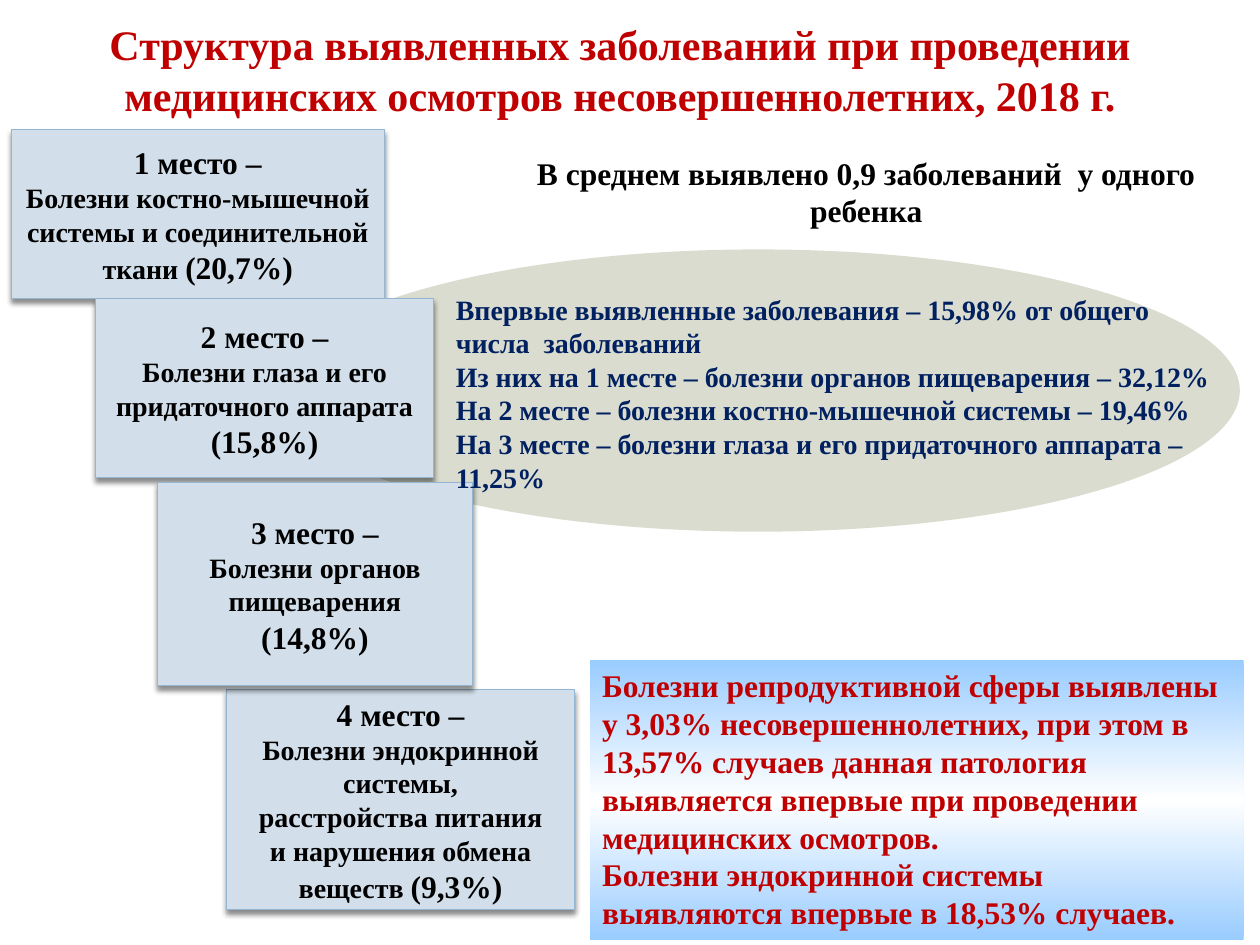
from copy import deepcopy
from dataclasses import dataclass

from lxml.etree import SubElement
from pptx import Presentation
from pptx.dml.color import RGBColor
from pptx.enum.shapes import MSO_SHAPE as Shape
from pptx.enum.text import MSO_ANCHOR as Anchor, MSO_AUTO_SIZE as AutoSize, PP_ALIGN as Align
from pptx.oxml.ns import qn
from pptx.util import Inches, Pt


@dataclass(frozen=True)
class Theme:
    """Keep the typeface, type sizes and colours of the slide."""
    typeface: str = "Times New Roman"
    title: int = 24
    large: int = 18
    small: int = 16
    red: str = "C00000"
    navy: str = "002060"
    black: str = "000000"
    card_fill: str = "D2DEEA"
    card_line: str = "94B6D2"
    olive: str = "81875A"
    gradient: tuple = ("99CCFF", "FFFFFF", "99CCFF")


THEME = Theme()

CARDS = [
    ((0.09, 1.03, 2.96, 1.34), "1 место –",
     ["Болезни костно-мышечной", "системы и соединительной"], "ткани ", "(20,7%)"),
    ((0.76, 2.37, 2.68, 1.42), "2 место –",
     ["Болезни глаза и его", "придаточного аппарата"], "", "(15,8%)"),
    ((1.8, 5.47, 2.76, 1.75), "4 место –",
     ["Болезни эндокринной", "системы,", "расстройства питания", "и нарушения обмена"],
     "веществ ", "(9,3%)"),
    ((1.25, 3.83, 2.5, 1.61), "3 место –",
     ["Болезни органов", "пищеварения"], "", "(14,8%)"),
]

FIRST_DETECTED = [
    "Впервые выявленные заболевания – 15,98% от общего числа  заболеваний",
    "Из них на 1 месте – болезни органов пищеварения – 32,12%",
    "На 2 месте – болезни костно-мышечной системы – 19,46%",
    "На 3 месте – болезни глаза и его придаточного аппарата – 11,25%",
]

REPRODUCTIVE = [
    "Болезни репродуктивной сферы выявлены у 3,03% несовершеннолетних, при этом в "
    "13,57% случаев данная патология выявляется впервые при проведении",
    "медицинских осмотров.",
    "Болезни эндокринной системы выявляются впервые в 18,53% случаев.",
]


def rgb(value):
    """Turn a hex string into a colour."""
    return RGBColor.from_string(value)


def write_lines(frame, lines, color, align):
    """Write one paragraph per line, each line a list of (text, size) runs."""
    for index, runs in enumerate(lines):
        paragraph = frame.paragraphs[0] if index == 0 else frame.add_paragraph()
        paragraph.alignment = align
        font = paragraph.font
        font.name, font.bold, font.size = THEME.typeface, True, Pt(runs[0][1])
        font.color.rgb = rgb(color)
        for text, size in runs:
            run = paragraph.add_run()
            run.text = text
            if size != runs[0][1]:
                run.font.size = Pt(size)


def uniform(texts, size):
    """Give every text the same size."""
    return [[(text, size)] for text in texts]


def add_text(slide, box, texts, size, color, align=Align.LEFT, top_margin=0.05):
    """Add a wrapping text box."""
    frame = slide.shapes.add_textbox(*map(Inches, box)).text_frame
    frame.word_wrap = True
    frame.margin_top = Inches(top_margin)
    frame.auto_size = AutoSize.SHAPE_TO_FIT_TEXT
    write_lines(frame, uniform(texts, size), color, align)


def add_plain_shape(slide, kind, box):
    """Add a preset shape without shadow or outline."""
    shape = slide.shapes.add_shape(kind, *map(Inches, box))
    shape.shadow.inherit = False
    shape.line.fill.background()
    return shape


def add_shadow(shape):
    """Cast a soft black shadow straight down."""
    effects = shape._element.spPr.find(qn("a:effectLst"))
    shadow = SubElement(effects, qn("a:outerShdw"), blurRad=str(Pt(3)), dist=str(Pt(2.4)),
                        dir="5400000", rotWithShape="0")
    color = SubElement(shadow, qn("a:srgbClr"), val=THEME.black)
    SubElement(color, qn("a:alpha"), val="45000")


def add_card(slide, box, place, disease, last_words, share):
    """Add a ranked disease card."""
    card = add_plain_shape(slide, Shape.RECTANGLE, box)
    card.fill.solid()
    card.fill.fore_color.rgb = rgb(THEME.card_fill)
    card.line.color.rgb = rgb(THEME.card_line)
    card.line.width = Pt(0.79)
    add_shadow(card)
    ending = [(last_words, THEME.small)] if last_words else []
    lines = [[(place, THEME.large)], *uniform(disease, THEME.small),
             ending + [(share, THEME.large)]]
    frame = card.text_frame
    frame.word_wrap = False
    frame.vertical_anchor = Anchor.MIDDLE
    write_lines(frame, lines, THEME.black, Align.CENTER)


def add_ellipse(slide, box):
    """Add the translucent backdrop ellipse."""
    ellipse = add_plain_shape(slide, Shape.OVAL, box)
    ellipse.fill.solid()
    ellipse.fill.fore_color.rgb = rgb(THEME.olive)
    color = ellipse._element.spPr.find(qn("a:solidFill"))[0]
    SubElement(color, qn("a:alpha"), val="29000")


def add_gradient_panel(slide, box, texts):
    """Add a panel with a three-stop vertical gradient."""
    panel = add_plain_shape(slide, Shape.RECTANGLE, box)
    panel.fill.gradient()
    panel.fill.gradient_angle = 90
    stops = panel._element.spPr.find(qn("a:gradFill")).find(qn("a:gsLst"))
    stops.insert(1, deepcopy(stops[0]))
    for index, (stop, color) in enumerate(zip(panel.fill.gradient_stops, THEME.gradient)):
        stop.position = index / 2
        stop.color.rgb = rgb(color)
    frame = panel.text_frame
    frame.word_wrap = True
    frame.vertical_anchor = Anchor.TOP
    frame.auto_size = AutoSize.SHAPE_TO_FIT_TEXT
    write_lines(frame, uniform(texts, THEME.large), THEME.red, Align.LEFT)


def main():
    """Build and save the slide."""
    presentation = Presentation()
    presentation.slide_width, presentation.slide_height = Inches(10), Inches(7.5)
    slide = presentation.slides.add_slide(presentation.slide_layouts[6])
    add_text(slide, (0.09, -0.2, 9.66, 1.51),
             ["Структура выявленных заболеваний при проведении медицинских осмотров "
              "несовершеннолетних, 2018 г."],
             THEME.title, THEME.red, Align.CENTER, top_margin=0.35)
    add_ellipse(slide, (2.19, 1.98, 7.65, 2.24))
    for card in CARDS:
        add_card(slide, *card)
    add_text(slide, (3.75, 1.17, 6.25, 0.71),
             ["В среднем выявлено 0,9 заболеваний  у одного ребенка"],
             THEME.large, THEME.black, Align.CENTER)
    add_gradient_panel(slide, (4.68, 5.24, 5.19, 2.22), REPRODUCTIVE)
    add_text(slide, (3.52, 2.27, 6.24, 1.72), FIRST_DETECTED, THEME.small, THEME.navy)
    presentation.save("out.pptx")


if __name__ == "__main__":
    main()
